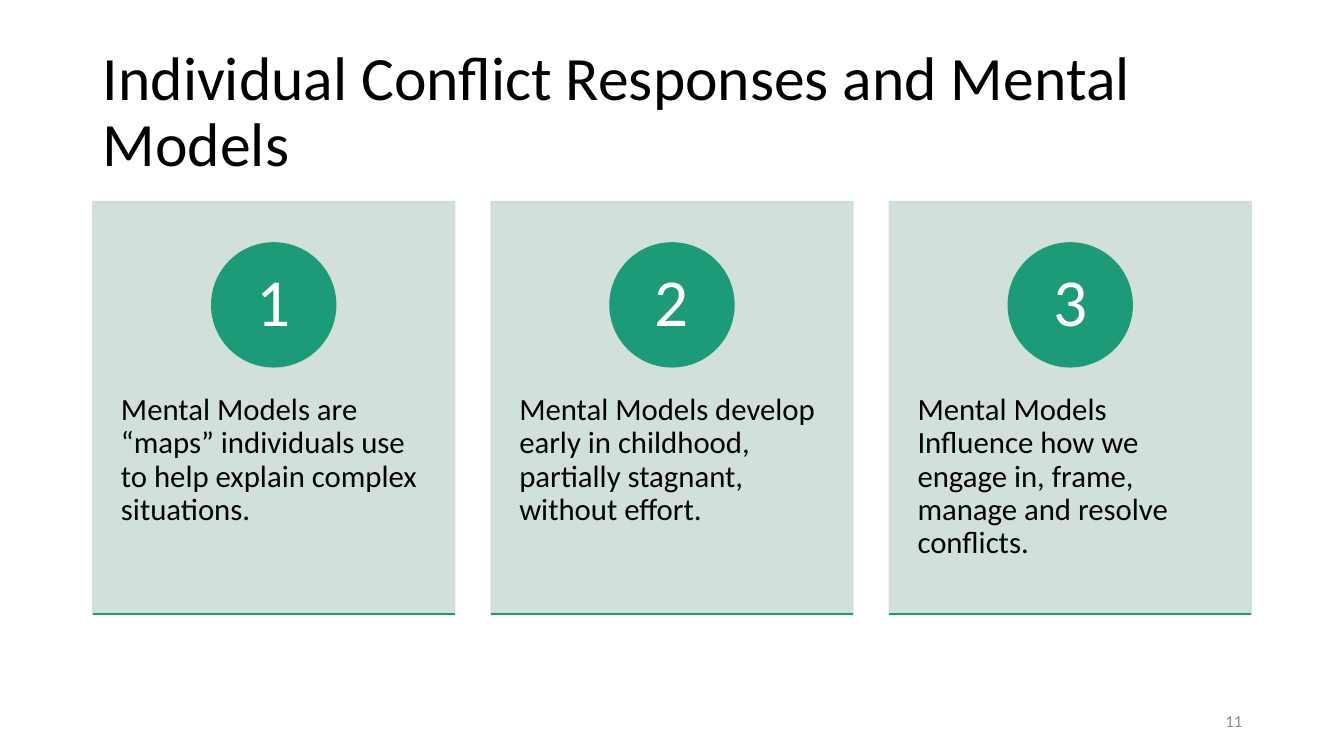
from lxml.etree import SubElement
from pptx import Presentation
from pptx.dml.color import RGBColor
from pptx.enum.shapes import MSO_CONNECTOR, MSO_SHAPE
from pptx.enum.text import MSO_ANCHOR, MSO_AUTO_SIZE, PP_ALIGN
from pptx.oxml.ns import qn
from pptx.util import Emu, Pt

PX = 9144
FONT = "Calibri"
COLORS = {
    "text": "000000",
    "card": "CDDED6",
    "accent": "1D9A78",
    "badge_text": "FFFFFF",
    "page_number": "8C8C8C",
}
CARD_LEFT, CARD_TOP, CARD_W, CARD_H = 92, 200, 359, 410
CARD_STEP = 395
BADGE_TOP, BADGE_SIZE = 241, 123
CARD_TEXTS = [
    "Mental Models are “maps” individuals use to help explain complex situations.",
    "Mental Models develop early in childhood, partially stagnant, without effort.",
    "Mental Models Influence how we engage in, frame, manage and resolve conflicts.",
]


def px(*values):
    return [Emu(v * PX) for v in values]


def rgb(name):
    return RGBColor.from_string(COLORS[name])


def set_text(sp, text, size, color, align=PP_ALIGN.LEFT, anchor=MSO_ANCHOR.MIDDLE,
             insets=(10, 5), spacing=0.9, after=0):
    tf = sp.text_frame
    tf.word_wrap = True
    tf.auto_size = MSO_AUTO_SIZE.NONE
    tf.vertical_anchor = anchor
    tf.margin_left, tf.margin_top = tf.margin_right, tf.margin_bottom = px(*insets)
    tf.text = text
    p = tf.paragraphs[0]
    p.alignment = align
    p.line_spacing = spacing
    p.space_before, p.space_after = Pt(0), Pt(after)
    p.font.name, p.font.size = FONT, Pt(size)
    p.font.color.rgb = rgb(color)


def add_title(s, text):
    sp = s.shapes.title
    sp.left, sp.top, sp.width, sp.height = px(92, 40, 1150, 145)
    set_text(sp, text, 44, "text")


def add_filled(s, kind, box, color):
    sp = s.shapes.add_shape(kind, *px(*box))
    sp.shadow.inherit = False
    sp.fill.solid()
    sp.fill.fore_color.rgb = rgb(color)
    sp.line.color.rgb = rgb(color)
    sp.line.width = Pt(1)
    return sp


def set_opacity(sp, percent):
    for clr in sp._element.spPr.iter(qn("a:srgbClr")):
        SubElement(clr, qn("a:alpha"), val=str(percent * 1000))


def add_rule(s, left, top, width):
    line = s.shapes.add_connector(MSO_CONNECTOR.STRAIGHT, *px(left, top, left + width, top))
    line.line.color.rgb = rgb("accent")
    line.line.width = Pt(1)
    SubElement(line._element.spPr, qn("a:effectLst"))


def add_card(s, number, left, text):
    card = add_filled(s, MSO_SHAPE.RECTANGLE, (left, CARD_TOP, CARD_W, CARD_H), "card")
    set_opacity(card, 90)
    body = s.shapes.add_textbox(*px(left, 355, CARD_W, 246))
    set_text(body, text, 22, "text", anchor=MSO_ANCHOR.TOP, insets=(28, 36))
    badge_left = left + (CARD_W - BADGE_SIZE) // 2
    badge = add_filled(s, MSO_SHAPE.OVAL, (badge_left, BADGE_TOP, BADGE_SIZE, BADGE_SIZE), "accent")
    set_text(badge, str(number), 48, "badge_text", align=PP_ALIGN.CENTER, insets=(10, 1))
    add_rule(s, left, CARD_TOP + CARD_H - 1, CARD_W)


def add_page_number(s, number):
    sp = s.shapes.add_textbox(*px(942, 695, 300, 40))
    set_text(sp, str(number), 12, "page_number", align=PP_ALIGN.RIGHT, spacing=1.0, after=6)


def main():
    prs = Presentation()
    prs.slide_width, prs.slide_height = px(1333, 750)
    s = prs.slides.add_slide(prs.slide_layouts[5])
    add_title(s, "Individual Conflict Responses and Mental Models")
    for i, text in enumerate(CARD_TEXTS):
        add_card(s, i + 1, CARD_LEFT + i * CARD_STEP, text)
    add_page_number(s, 11)
    prs.save("out.pptx")


if __name__ == "__main__":
    main()
